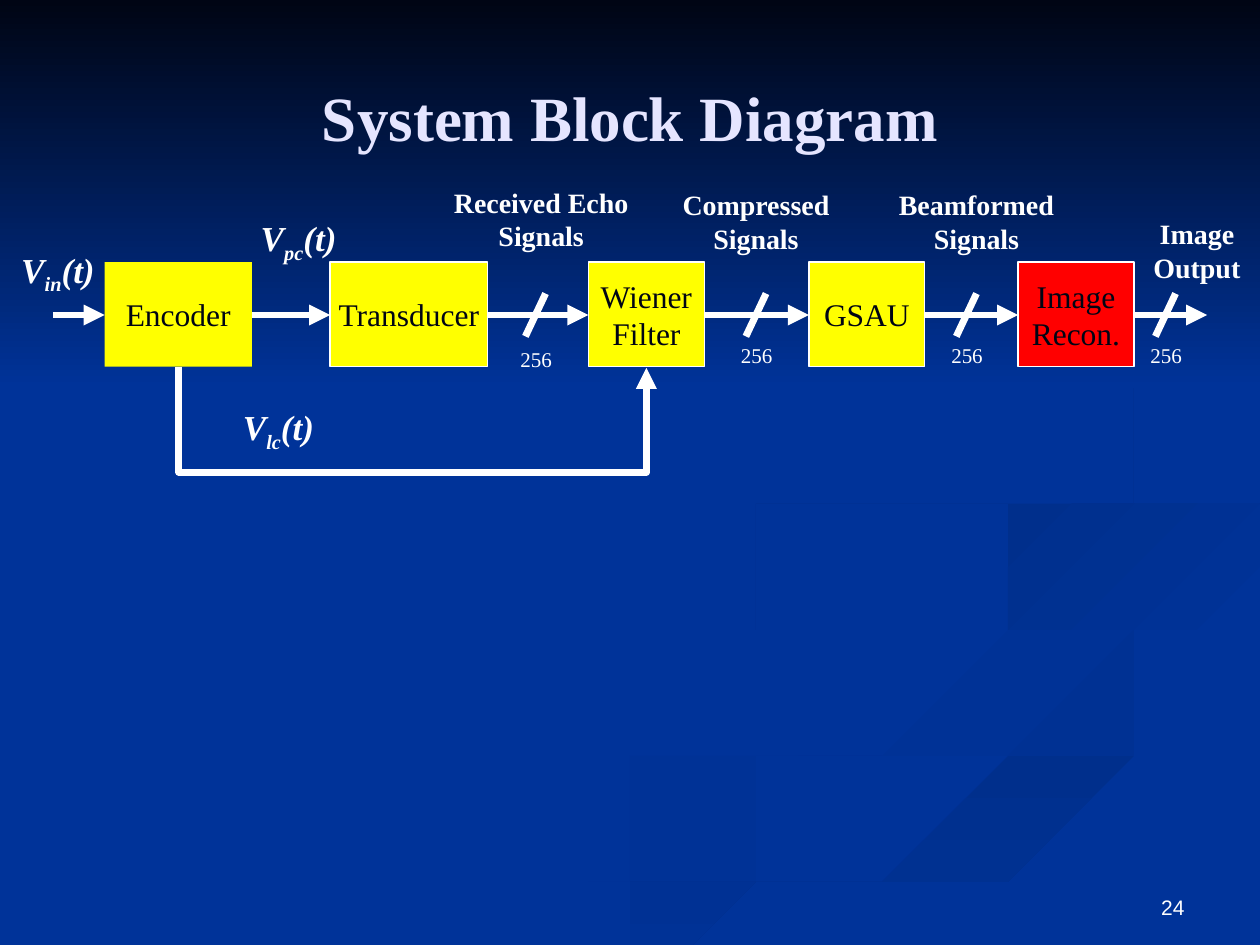
"""Build the system block diagram slide."""
from lxml.etree import SubElement as Sub
from pptx import Presentation
from pptx.dml.color import RGBColor
from pptx.enum.shapes import MSO_CONNECTOR as Link, MSO_SHAPE as Form
from pptx.enum.text import MSO_ANCHOR as Anchor, PP_ALIGN as Align
from pptx.oxml.ns import qn
from pptx.util import Inches, Pt

WHITE = RGBColor(0xFF, 0xFF, 0xFF)
LILAC = RGBColor(0xE5, 0xE5, 0xFF)
INK = RGBColor(0x00, 0x05, 0x14)
BLUE = RGBColor(0x00, 0x33, 0x99)
SHADE = RGBColor(0x00, 0x31, 0x93)
DARK = RGBColor(0x00, 0x2F, 0x8C)
YELLOW = RGBColor(0xFF, 0xFF, 0x00)
RED = RGBColor(0xFF, 0x00, 0x00)
SERIF = "Times New Roman"
MID = 2.5
STEPS = 5

WAVES = [
    (BLUE, SHADE, 0, [
        (7.81, 5.53), (6.82, 5.19), (5.75, 4.6), (6.11, 4.99), (7.52, 5.43),
        (7.74, 5.83), (5.39, 6.49), (3, 7.49), (3.61, 7.49), (5.64, 6.65), (7.91, 5.97)]),
    (BLUE, SHADE, 45, [
        (9.43, 5.7), (8.7, 5.3), (7.45, 4.9), (7.24, 4.64), (7.46, 5),
        (8.68, 5.44), (9.18, 5.81), (8.94, 6.05)]),
    (DARK, BLUE, 90, [
        (5.03, 7.49), (5.71, 7.49), (7.52, 6.72), (9.98, 6.09), (9.98, 5.81), (7.64, 6.47)]),
    (BLUE, BLUE, 0, [
        (7.25, 4.64), (9.05, 5.4), (9.26, 5.93), (7.04, 6.55), (4.77, 7.49), (5.19, 7.47),
        (7.65, 6.47), (9.99, 5.81), (9.99, 5.38), (8.04, 4.85), (8, 4.42), (9.99, 4.02),
        (9.99, 3.87), (7.88, 4.22)]),
    (DARK, BLUE, 45, [
        (7.81, 4.6), (8.26, 4.96), (8.05, 4.72), (8.59, 4.43), (9.98, 4.2),
        (9.98, 4.02), (8.35, 4.3)]),
    (DARK, BLUE, 45, [
        (6.83, 4.3), (8.41, 3.96), (8.94, 3.44), (8.54, 2.83), (7.62, 2.33),
        (8.62, 2.92), (8.86, 3.48), (7.91, 3.92), (6.25, 4.26), (5.77, 4.62),
        (6.22, 5), (5.96, 4.61)]),
]

BLOCKS = [
    ("Encoder", 0.83, 1.17, YELLOW),
    ("Transducer", 2.62, 1.25, YELLOW),
    ("Wiener\nFilter", 4.67, 0.92, YELLOW),
    ("GSAU", 6.42, 0.92, YELLOW),
    ("Image\nRecon.", 8.08, 0.92, RED),
]

SIGNALS = [
    ("Received Echo Signals", 3.42, 1.42, 1.75),
    ("Compressed Signals", 5.25, 1.44, 1.5),
    ("Beamformed Signals", 7, 1.44, 1.5),
    ("Image Output", 9, 1.67, 1),
]

VOLTS = [
    ("V|in|(t)", -0.33, 1.92, 1.58),
    ("V|pc|(t)", 1.58, 1.67, 1.58),
    ("V|lc|(t)", 1.75, 3.17, 0.92),
]

TAPS = [(4.25, 2.7), (6, 2.67), (7.67, 2.67), (9.25, 2.67)]


def write(shape, text, size=18, color=WHITE, font=SERIF, bold=False, slant=False,
          align=Align.CENTER, anchor=Anchor.TOP, wrap=True):
    """Fill a shape with text; bars enclose a subscript."""
    frame = shape.text_frame
    frame.word_wrap = wrap
    frame.vertical_anchor = anchor
    for row, line in enumerate(text.split("\n")):
        para = frame.add_paragraph() if row else frame.paragraphs[0]
        para.alignment = align
        for spot, part in enumerate(line.split("|")):
            run = para.add_run()
            run.text = part
            face = run.font
            face.name, face.size = font, Pt(size)
            face.bold, face.italic = bold, slant
            face.color.rgb = color
            if spot % 2:
                run._r.get_or_add_rPr().set("baseline", "-25000")


def label(slide, text, left, top, width, height, **style):
    """Add a text box."""
    box = slide.shapes.add_textbox(Inches(left), Inches(top), Inches(width), Inches(height))
    write(box, text, **style)


def blend(a, b, c, d, t):
    """Give the value at t of a smooth curve from b to c."""
    bend = 2 * a - 5 * b + 4 * c - d
    twist = 3 * (b - c) + d - a
    return b + t * (c - a + t * (bend + t * twist)) / 2


def smooth(knots):
    """Give a rounded closed outline through the knots."""
    count = len(knots)
    curve = []
    for spot in range(count):
        near = [knots[(spot + step) % count] for step in (-1, 0, 1, 2)]
        for step in range(STEPS):
            x, y = (blend(*axis, step / STEPS) for axis in zip(*near))
            curve.append((min(x, 10), min(y, 7.5)))
    return curve


def shade(shape, first, last, angle):
    """Give a shape a gradient and no outline."""
    shape.shadow.inherit = False
    shape.line.fill.background()
    shape.fill.gradient()
    shape.fill.gradient_angle = (360 - angle) % 360
    for stop, color in zip(shape.fill.gradient_stops, (first, last)):
        stop.color.rgb = color


def wave(slide, first, last, angle, knots):
    """Add one curved ribbon of the backdrop."""
    curve = smooth(knots)
    pen = slide.shapes.build_freeform(*curve[0], scale=Inches(1))
    pen.add_line_segments(curve[1:], close=True)
    shade(pen.convert_to_shape(), first, last, angle)


def block(slide, text, left, width, fill):
    """Add one stage of the signal chain."""
    shape = slide.shapes.add_shape(
        Form.RECTANGLE, Inches(left), Inches(2.08), Inches(width), Inches(0.83))
    shape.shadow.inherit = False
    shape.fill.solid()
    shape.fill.fore_color.rgb = fill
    if text == "Encoder":
        shape.line.fill.background()
    else:
        shape.line.color.rgb = WHITE
        shape.line.width = Pt(0.75)
    write(shape, text, color=INK, anchor=Anchor.MIDDLE, wrap=False)


def wire(slide, start, end, kind=Link.STRAIGHT, arrow=True):
    """Add a white line, with an arrowhead if wanted."""
    link = slide.shapes.add_connector(kind, *map(Inches, start + end))
    link.line.color.rgb = WHITE
    link.line.width = Pt(4)
    if arrow:
        Sub(link.line._get_or_add_ln(), qn("a:tailEnd"), type="triangle")
    Sub(link._element.spPr, qn("a:effectLst"))
    return link


def bypass(slide):
    """Add the bent arrow that runs below the chain to the filter."""
    link = wire(slide, (3.27, 1.06), (3.28, 4.77), kind=Link.ELBOW)
    frame = link._element.spPr.find(qn("a:xfrm"))
    frame.set("rot", "16200000")
    frame.set("flipH", "1")
    shape = link._element.spPr.find(qn("a:prstGeom"))
    Sub(shape.find(qn("a:avLst")), qn("a:gd"), name="adj1", fmla="val 8500000")


def main():
    """Build and save the slide."""
    deck = Presentation()
    deck.slide_width, deck.slide_height = Inches(10), Inches(7.5)
    slide = deck.slides.add_slide(deck.slide_layouts[6])
    slide.background.fill.solid()
    slide.background.fill.fore_color.rgb = BLUE
    for item in WAVES:
        wave(slide, *item)
    sky = slide.shapes.add_shape(Form.RECTANGLE, 0, 0, Inches(10), Inches(3.08))
    shade(sky, INK, BLUE, 90)
    label(slide, "System Block Diagram", 0.5, 0.3, 9, 1.25, size=36, color=LILAC,
          bold=True, anchor=Anchor.MIDDLE)
    label(slide, "24", 7.17, 6.83, 2.33, 0.52, size=12, font="Arial",
          align=Align.RIGHT, anchor=Anchor.BOTTOM)
    for item in BLOCKS:
        block(slide, *item)
    for item in SIGNALS:
        label(slide, *item, 0.64, size=16, bold=True)
    for item in VOLTS:
        label(slide, *item, 0.44, size=20, bold=True, slant=True)
    for mid, top in TAPS:
        wire(slide, (mid - 0.08, 2.67), (mid + 0.08, 2.33), arrow=False)
        label(slide, "256", mid - 0.33, top, 0.67, 0.3, size=12)
    bypass(slide)
    starts = [0.42] + [left + width for _, left, width, _ in BLOCKS]
    ends = [left for _, left, _, _ in BLOCKS] + [9.58]
    for start, end in zip(starts, ends):
        wire(slide, (start, MID), (end, MID))
    deck.save("out.pptx")


if __name__ == "__main__":
    main()
